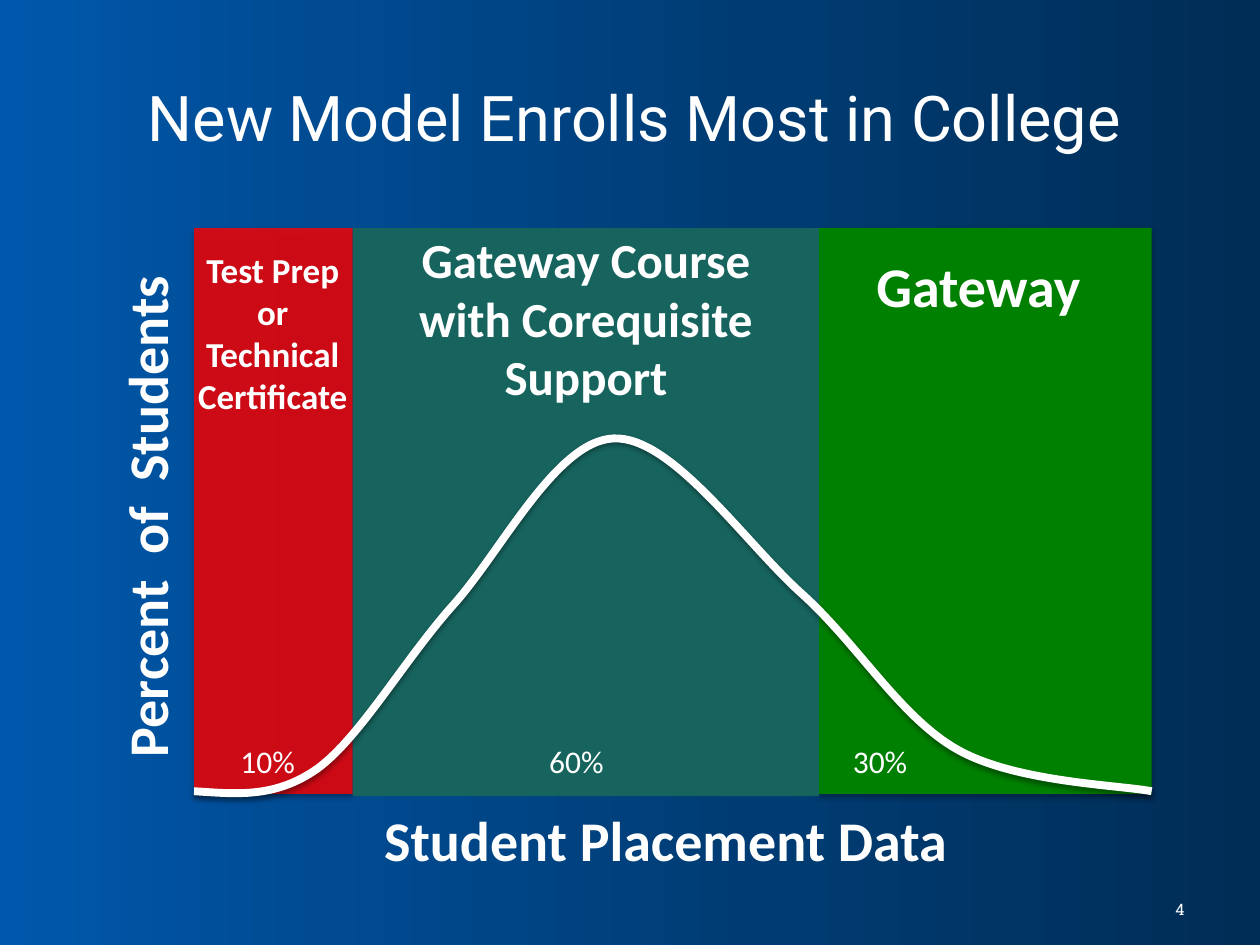
from copy import deepcopy
from dataclasses import dataclass

from lxml.etree import SubElement
from pptx import Presentation
from pptx.dml.color import RGBColor as RGB
from pptx.enum.shapes import MSO_SHAPE as SHAPE
from pptx.enum.text import MSO_ANCHOR as ANCHOR, PP_ALIGN as ALIGN
from pptx.oxml.ns import qn
from pptx.util import Inches, Pt


@dataclass(frozen=True)
class Theme:
    white: str = "FFFFFF"
    red: str = "FF0000"
    teal: str = "17645F"
    green: str = "008000"
    backdrop: tuple = ((0, "0058AC"), (26, "004B92"), (60, "003C73"), (100, "002D56"))
    title_font: str = "Roboto"
    body_font: str = "Calibri"
    number_font: str = "Roboto Slab"
    title: int = 36
    axis: int = 32
    heading: int = 28
    label: int = 20
    share: int = 18
    number: int = 9


def write(tf, text, size, font, color, bold=False, align=ALIGN.CENTER,
          anchor=ANCHOR.TOP, word_gap=0):
    """Put formatted text in a frame; word_gap widens each space by that many points."""
    tf.word_wrap = True
    tf.vertical_anchor = anchor
    p = tf.paragraphs[0]
    p.alignment = align
    parts = text.replace(" ", "\n \n").split("\n") if word_gap else [text]
    for part in parts:
        r = p.add_run()
        r.text = part
        r.font.size, r.font.name, r.font.bold = Pt(size), font, bold
        r.font.color.rgb = RGB.from_string(color)
        if part == " ":
            r.font._element.set("spc", str(round(word_gap * 100)))


def add_alpha(color, percent):
    SubElement(color, qn("a:alpha"), val=str(percent * 1000))


def add_shadow(sp, opacity, distance):
    """Give the shape a soft shadow that falls straight down."""
    sp.shadow.inherit = False
    effects = sp.element.spPr.find(qn("a:effectLst"))
    shadow = SubElement(effects, qn("a:outerShdw"), blurRad=str(Pt(3.1)),
                        dist=str(Pt(distance)), dir="5400000", rotWithShape="0")
    add_alpha(SubElement(shadow, qn("a:srgbClr"), val="000000"), opacity)


class SlideBuilder:
    def __init__(self, prs, theme):
        self.theme = theme
        self.slide = prs.slides.add_slide(prs.slide_layouts[5])

    def background(self):
        fill = self.slide.background.fill
        fill.gradient()
        fill.gradient_angle = 0
        stops = next(self.slide.element.iter(qn("a:gsLst")))
        for _ in range(len(self.theme.backdrop) - len(stops)):
            stops.append(deepcopy(stops[0]))
        for stop, (position, color) in zip(fill.gradient_stops, self.theme.backdrop):
            stop.position = position / 100
            stop.color.rgb = RGB.from_string(color)

    def title(self, text, left, top, width, height):
        sp = self.slide.shapes.title
        sp.left, sp.top = Inches(left), Inches(top)
        sp.width, sp.height = Inches(width), Inches(height)
        write(sp.text_frame, text, self.theme.title, self.theme.title_font,
              self.theme.white, anchor=ANCHOR.MIDDLE)

    def band(self, left, top, width, height, color, opacity=100, shadow=True):
        sp = self.slide.shapes.add_shape(
            SHAPE.RECTANGLE, Inches(left), Inches(top), Inches(width), Inches(height))
        sp.fill.solid()
        sp.fill.fore_color.rgb = RGB.from_string(color)
        sp.line.fill.background()
        sp.shadow.inherit = False
        if opacity < 100:
            add_alpha(sp.element.spPr.find(qn("a:solidFill"))[0], opacity)
        if shadow:
            add_shadow(sp, 35, 1.8)

    def text(self, text, left, top, width, height, size, font=None, rotation=0, **style):
        sp = self.slide.shapes.add_textbox(
            Inches(left), Inches(top), Inches(width), Inches(height))
        sp.rotation = rotation
        write(sp.text_frame, text, size, font or self.theme.body_font,
              self.theme.white, **style)

    def curve(self, *points):
        """Draw a Bezier line: a start, then threes of two controls and an end."""
        start, *rest = [(Inches(x), Inches(y)) for x, y in points]
        builder = self.slide.shapes.build_freeform(*start)
        builder.add_line_segments(rest, close=False)
        sp = builder.convert_to_shape()
        path = next(sp.element.iter(qn("a:path")))
        lines = path.findall(qn("a:lnTo"))
        for i in range(0, len(lines), 3):
            bezier = SubElement(path, qn("a:cubicBezTo"))
            for line in lines[i:i + 3]:
                bezier.append(line[0])
                path.remove(line)
        sp.fill.background()
        sp.line.color.rgb = RGB.from_string(self.theme.white)
        sp.line.width = Pt(4.5)
        add_shadow(sp, 38, 1.6)


def main():
    prs = Presentation()
    prs.slide_width, prs.slide_height = Inches(10), Inches(7.5)
    theme = Theme()
    s = SlideBuilder(prs, theme)
    s.background()
    s.title("New Model Enrolls Most in College", 0.5, 0.3, 9.07, 1.25)
    s.text("4", 7.17, 7.09, 2.33, 0.26, theme.number, font=theme.number_font,
           align=ALIGN.RIGHT, anchor=ANCHOR.MIDDLE)

    top = 1.81
    s.band(6.5, top, 2.64, 4.49, theme.green)
    s.band(1.54, top, 1.26, 4.49, theme.red, opacity=80)
    s.band(2.8, top, 3.7, 4.51, theme.teal, shadow=False)

    s.text("Percent of Students", -0.99, 3.78, 4.3, 0.64, theme.axis,
           rotation=270, bold=True, word_gap=7.2)
    s.text("Student Placement Data", 1.56, 6.34, 7.45, 0.64, theme.axis, bold=True)

    s.curve((1.54, 6.28),
            (1.87, 6.3), (2.18, 6.34), (2.52, 6.1),
            (2.86, 5.85), (3.2, 5.25), (3.59, 4.81),
            (3.98, 4.38), (4.41, 3.5), (4.87, 3.48),
            (5.33, 3.46), (5.9, 4.29), (6.35, 4.7),
            (6.81, 5.11), (7.14, 5.69), (7.6, 5.95),
            (8.06, 6.21), (8.88, 6.23), (9.14, 6.28))

    for share, left, width in (("30%", 6.67, 0.65), ("10%", 1.81, 0.76), ("60%", 4.26, 0.82)):
        s.text(share, left, 5.84, width, 0.41, theme.share, align=ALIGN.LEFT)

    for heading, left, y, width, height, size in (
            ("Gateway", 6.6, 1.95, 2.33, 0.65, theme.axis),
            ("Test Prep or Technical Certificate", 1.41, 1.92, 1.51, 1.45, theme.label),
            ("Gateway Course with Corequisite Support", 3.15, 1.77, 3, 1.51, theme.heading)):
        s.text(heading, left, y, width, height, size, bold=True)

    prs.save("out.pptx")


if __name__ == "__main__":
    main()
